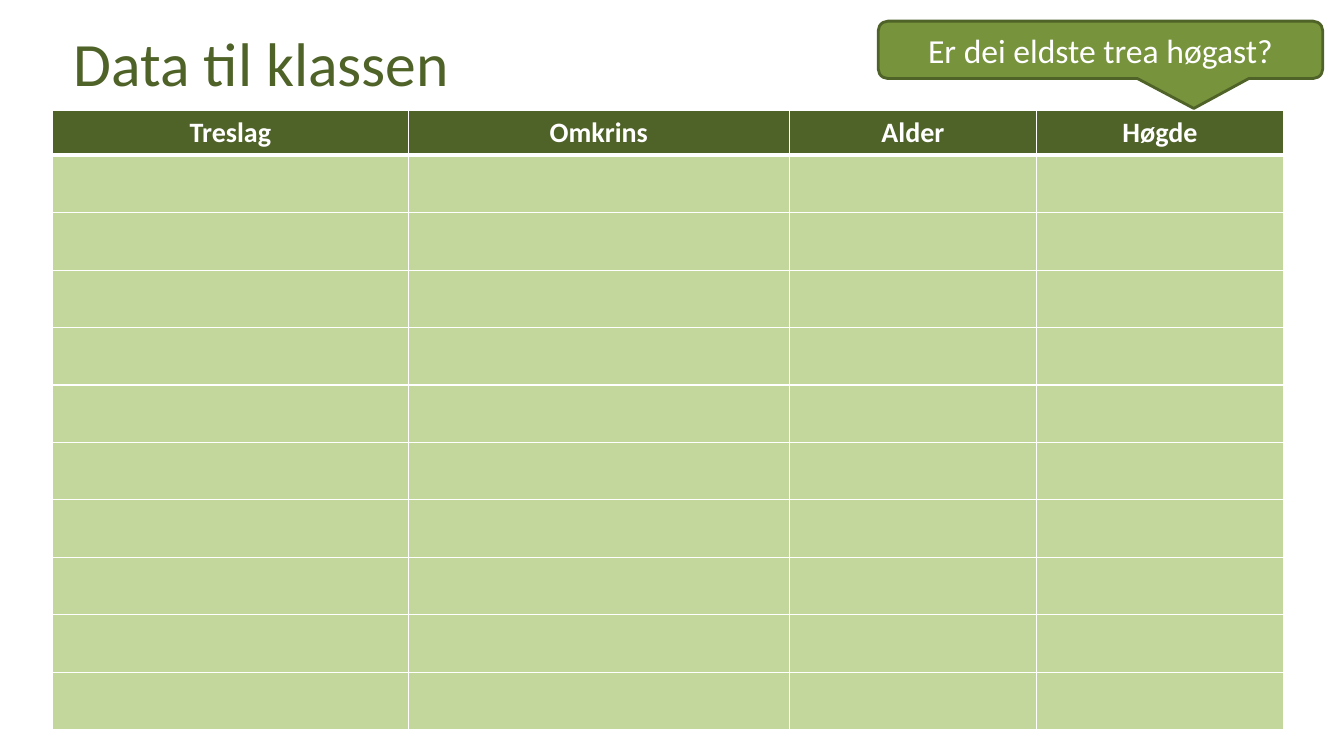
from lxml import etree
from pptx import Presentation
from pptx import util as u
from pptx.dml.color import RGBColor
from pptx.enum import shapes, text
from pptx.oxml.ns import qn

PX = 9144  # 100 px to the inch
FONT = "Calibri"
COLORS = {"dark": "4F6228", "mid": "77933C", "light": "C3D69B", "white": "FFFFFF"}

HEADERS = ["Treslag", "Omkrins", "Alder", "Høgde"]
COL_WIDTHS = [353, 378, 245, 245]
BODY_ROWS = 10
HEADER_H, ROW_H = 42, 57


def rgb(name):
    return RGBColor.from_string(COLORS[name])


def px(*lengths):
    return [u.Emu(n * PX) for n in lengths]


def write(tf, content, size, color, align, bold=False):
    p = tf.paragraphs[0]
    p.text = content
    p.alignment = align
    p.font.name = FONT
    p.font.size = u.Pt(size)
    p.font.bold = bold
    p.font.color.rgb = rgb(color)


def add_border(cell, side, points):
    ln = etree.SubElement(cell._tc.get_or_add_tcPr(), qn("a:ln" + side), w=str(u.Pt(points)))
    fill = etree.SubElement(ln, qn("a:solidFill"))
    etree.SubElement(fill, qn("a:srgbClr"), val=COLORS["white"])


def fill_cell(cell, color, borders):
    for side, points in borders.items():
        add_border(cell, side, points)
    cell.fill.solid()
    cell.fill.fore_color.rgb = rgb(color)


def place_title(s, x, y, w, h):
    sp = s.shapes.title
    sp.left, sp.top, sp.width, sp.height = px(x, y, w, h)
    sp.text_frame.vertical_anchor = text.MSO_ANCHOR.MIDDLE
    write(sp.text_frame, "Data til klassen", 44, "dark", text.PP_ALIGN.LEFT)


def add_tree_table(s, x, y):
    size = sum(COL_WIDTHS), HEADER_H + BODY_ROWS * ROW_H
    table = s.shapes.add_table(BODY_ROWS + 1, len(HEADERS), *px(x, y, *size)).table
    table.horz_banding = False
    for col, width in zip(table.columns, COL_WIDTHS):
        col.width = u.Emu(width * PX)
    for i, row in enumerate(table.rows):
        row.height = u.Emu((ROW_H if i else HEADER_H) * PX)
        for cell, header in zip(row.cells, HEADERS):
            if i:
                fill_cell(cell, "light", {"L": 1, "R": 1, "B": 1})
            else:
                fill_cell(cell, "dark", {"L": 1, "R": 1, "T": 1, "B": 3})
                write(cell.text_frame, header, 20, "white", text.PP_ALIGN.CENTER, True)


def add_question(s, x, y, w, h):
    sp = s.shapes.add_shape(shapes.MSO_SHAPE.ROUNDED_RECTANGULAR_CALLOUT, *px(x, y, w, h))
    for i, value in enumerate([0.21, 1.02, 0.17]):
        sp.adjustments[i] = value
    sp.shadow.inherit = False
    sp.fill.solid()
    sp.fill.fore_color.rgb = rgb("mid")
    sp.line.color.rgb = rgb("dark")
    sp.line.width = u.Pt(2)
    sp.text_frame.word_wrap = True
    sp.text_frame.vertical_anchor = text.MSO_ANCHOR.MIDDLE
    write(sp.text_frame, "Er dei eldste trea høgast?", 24, "white", text.PP_ALIGN.CENTER)


def main():
    prs = Presentation()
    prs.slide_width, prs.slide_height = px(1333, 750)
    s = prs.slides.add_slide(prs.slide_layouts[5])
    # Heading
    place_title(s, 63, -1, 1200, 125)
    # Table for the class to fill in
    add_tree_table(s, 52, 110)
    # Question pointing at the height column
    add_question(s, 871, 21, 441, 57)
    prs.save("out.pptx")


if __name__ == "__main__":
    main()
